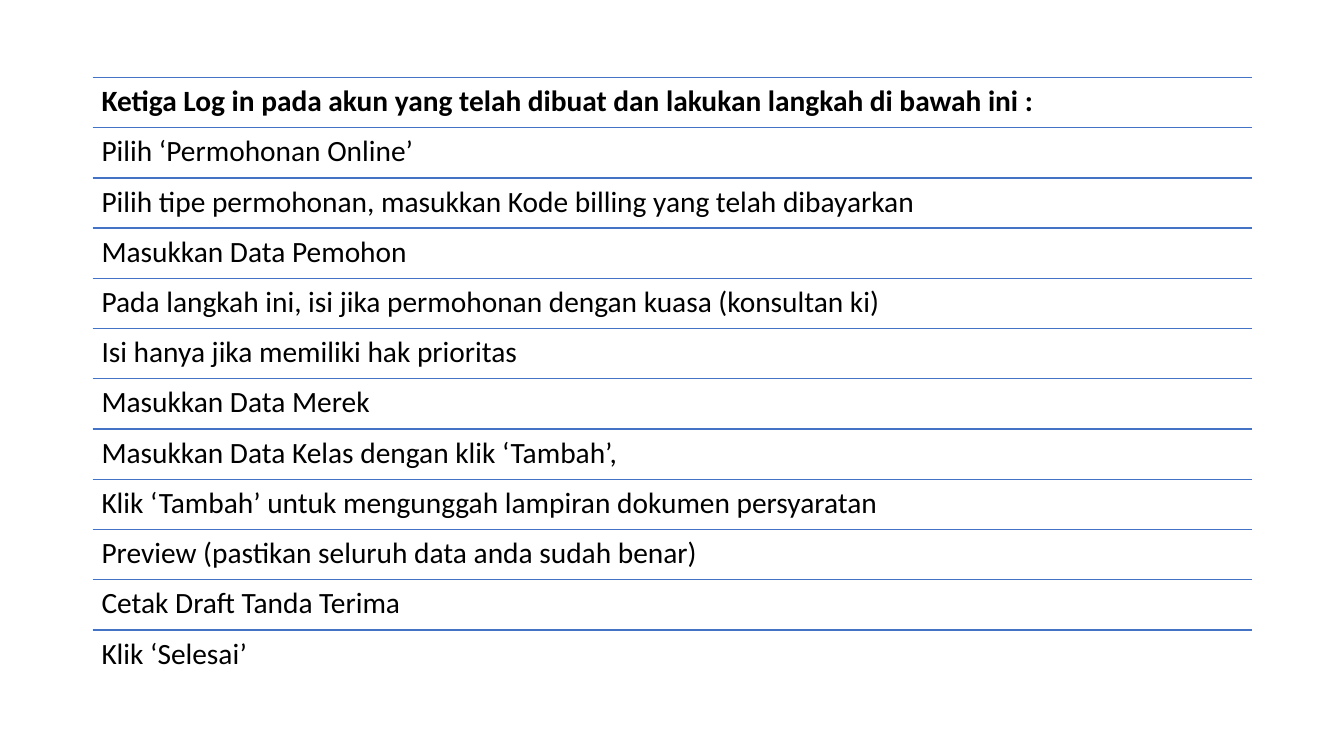
import dataclasses

import pptx
import pptx.dml.color
import pptx.enum.shapes
import pptx.enum.text
import pptx.oxml.ns
import pptx.shapes.shapetree
import pptx.util
import lxml.etree

Pt = pptx.util.Pt
RGBColor = pptx.dml.color.RGBColor


@dataclasses.dataclass(frozen=True)
class Theme:
    rule: RGBColor = RGBColor(0x44, 0x72, 0xC4)
    text: RGBColor = RGBColor(0x00, 0x00, 0x00)
    font: str = "Calibri"
    size: float = 21
    rule_width: float = 1


@dataclasses.dataclass(frozen=True)
class Step:
    text: str
    bold: bool = False


THEME = Theme()
LEFT, TOP, WIDTH, PITCH = 66.24, 55.3, 828, 35.88
INSET = 6.3

STEPS = [
    Step("Ketiga Log in pada akun yang telah dibuat dan lakukan langkah di bawah ini :", bold=True),
    Step("Pilih ‘Permohonan Online’"),
    Step("Pilih tipe permohonan, masukkan Kode billing yang telah dibayarkan"),
    Step("Masukkan Data Pemohon"),
    Step("Pada langkah ini, isi jika permohonan dengan kuasa (konsultan ki)"),
    Step("Isi hanya jika memiliki hak prioritas"),
    Step("Masukkan Data Merek"),
    Step("Masukkan Data Kelas dengan klik ‘Tambah’,"),
    Step("Klik ‘Tambah’ untuk mengunggah lampiran dokumen persyaratan"),
    Step("Preview (pastikan seluruh data anda sudah benar)"),
    Step("Cetak Draft Tanda Terima"),
    Step("Klik ‘Selesai’"),
]


def add_rule(shapes: pptx.shapes.shapetree.GroupShapes, y: float) -> None:
    line = shapes.add_connector(
        pptx.enum.shapes.MSO_CONNECTOR.STRAIGHT, Pt(LEFT), Pt(y), Pt(LEFT + WIDTH), Pt(y)
    )
    line.line.color.rgb = THEME.rule
    line.line.width = Pt(THEME.rule_width)
    lxml.etree.SubElement(line._element.spPr, pptx.oxml.ns.qn("a:effectLst"))


def add_step(shapes: pptx.shapes.shapetree.GroupShapes, step: Step, y: float) -> None:
    s = shapes.add_textbox(Pt(LEFT), Pt(y), Pt(WIDTH), Pt(PITCH))
    tf = s.text_frame
    tf.word_wrap = True
    tf.vertical_anchor = pptx.enum.text.MSO_ANCHOR.TOP
    tf.margin_left = tf.margin_right = tf.margin_top = tf.margin_bottom = Pt(INSET)
    p = tf.paragraphs[0]
    p.line_spacing = 0.9
    p.space_after = Pt(THEME.size * 0.35)
    r = p.add_run()
    r.text = step.text
    r.font.name = THEME.font
    r.font.size = Pt(THEME.size)
    r.font.bold = step.bold
    r.font.color.rgb = THEME.text


def main() -> None:
    prs = pptx.Presentation()
    prs.slide_width, prs.slide_height = Pt(960), Pt(540)
    slide = prs.slides.add_slide(prs.slide_layouts[6])
    step_list = slide.shapes.add_group_shape()
    for i, step in enumerate(STEPS):
        y = TOP + i * PITCH
        add_rule(step_list.shapes, y)
        add_step(step_list.shapes, step, y)
    prs.save("out.pptx")


if __name__ == "__main__":
    main()
